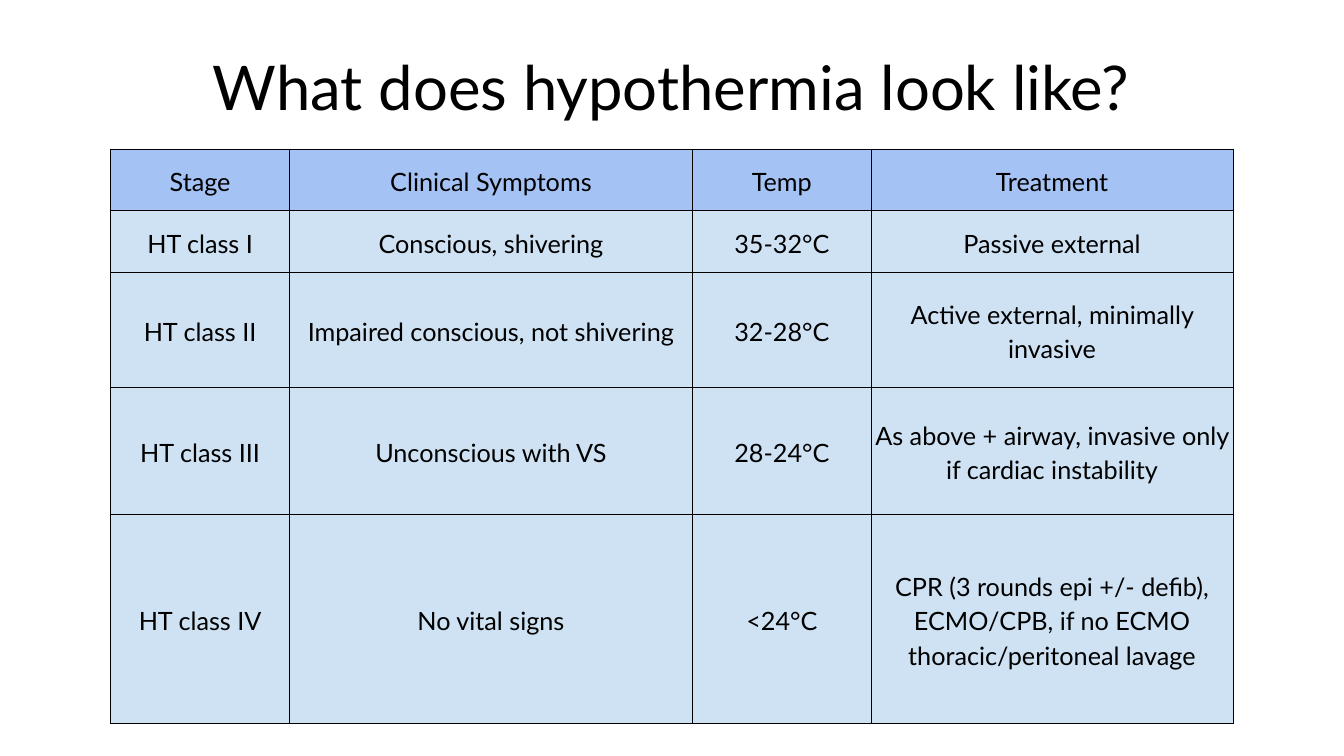
import pptx
import pptx.dml.color
import pptx.enum.text
import pptx.oxml
import pptx.oxml.ns
import pptx.util
from pptx.util import Inches

BLACK = pptx.dml.color.RGBColor(0x00, 0x00, 0x00)
HEADER_BLUE = pptx.dml.color.RGBColor(0xA4, 0xC2, 0xF4)
BODY_BLUE = pptx.dml.color.RGBColor(0xCF, 0xE2, 0xF3)
FONT_NAME = "Lato"

COLUMN_WIDTHS = [1.77, 4.0, 1.77, 3.59]
ROW_HEIGHTS = [0.61, 0.61, 1.14, 1.26, 2.08]
STAGES = [
    ["Stage", "Clinical Symptoms", "Temp", "Treatment"],
    ["HT class I", "Conscious, shivering", "35-32°C", "Passive external"],
    ["HT class II", "Impaired conscious, not shivering", "32-28°C",
     "Active external, minimally invasive"],
    ["HT class III", "Unconscious with VS", "28-24°C",
     "As above + airway, invasive only if cardiac instability"],
    ["HT class IV", "No vital signs", "<24°C",
     "CPR (3 rounds epi +/- defib), ECMO/CPB, if no ECMO thoracic/peritoneal lavage"],
]


def add_centred_text(text_frame, text, size, line_spacing):
    paragraph = text_frame.paragraphs[0]
    paragraph.alignment = pptx.enum.text.PP_ALIGN.CENTER
    paragraph.line_spacing = line_spacing
    run = paragraph.add_run()
    run.text = text
    run.font.name = FONT_NAME
    run.font.size = pptx.util.Pt(size)
    run.font.color.rgb = BLACK


def add_borders(cell):
    properties = cell._tc.get_or_add_tcPr()
    for side in ("lnL", "lnR", "lnT", "lnB"):
        properties.append(pptx.oxml.parse_xml(
            f'<a:{side} {pptx.oxml.ns.nsdecls("a")} w="{pptx.util.Pt(0.75)}">'
            f'<a:solidFill><a:srgbClr val="{BLACK}"/></a:solidFill></a:{side}>'))


presentation = pptx.Presentation()
presentation.slide_width = Inches(13.33)
presentation.slide_height = Inches(7.5)
slide = presentation.slides.add_slide(presentation.slide_layouts[5])

title = slide.shapes.title
title.left, title.top = Inches(0.45), Inches(0.31)
title.width, title.height = Inches(12.42), Inches(1.17)
title.text_frame.vertical_anchor = pptx.enum.text.MSO_ANCHOR.MIDDLE
add_centred_text(title.text_frame, "What does hypothermia look like?", 44, 0.9)

table = slide.shapes.add_table(
    len(ROW_HEIGHTS), len(COLUMN_WIDTHS), Inches(1.1), Inches(1.48),
    Inches(sum(COLUMN_WIDTHS)), Inches(sum(ROW_HEIGHTS))).table
table.first_row = False
table.horz_banding = False
for column, width in zip(table.columns, COLUMN_WIDTHS):
    column.width = Inches(width)
for row, height in zip(table.rows, ROW_HEIGHTS):
    row.height = Inches(height)

for row_index, stage in enumerate(STAGES):
    for column_index, text in enumerate(stage):
        cell = table.cell(row_index, column_index)
        cell.margin_left = cell.margin_right = Inches(0.03)
        cell.margin_top = cell.margin_bottom = Inches(0.03)
        cell.vertical_anchor = pptx.enum.text.MSO_ANCHOR.MIDDLE
        add_borders(cell)
        cell.fill.solid()
        cell.fill.fore_color.rgb = HEADER_BLUE if row_index == 0 else BODY_BLUE
        add_centred_text(cell.text_frame, text, 18, 1.15)

presentation.save("out.pptx")
